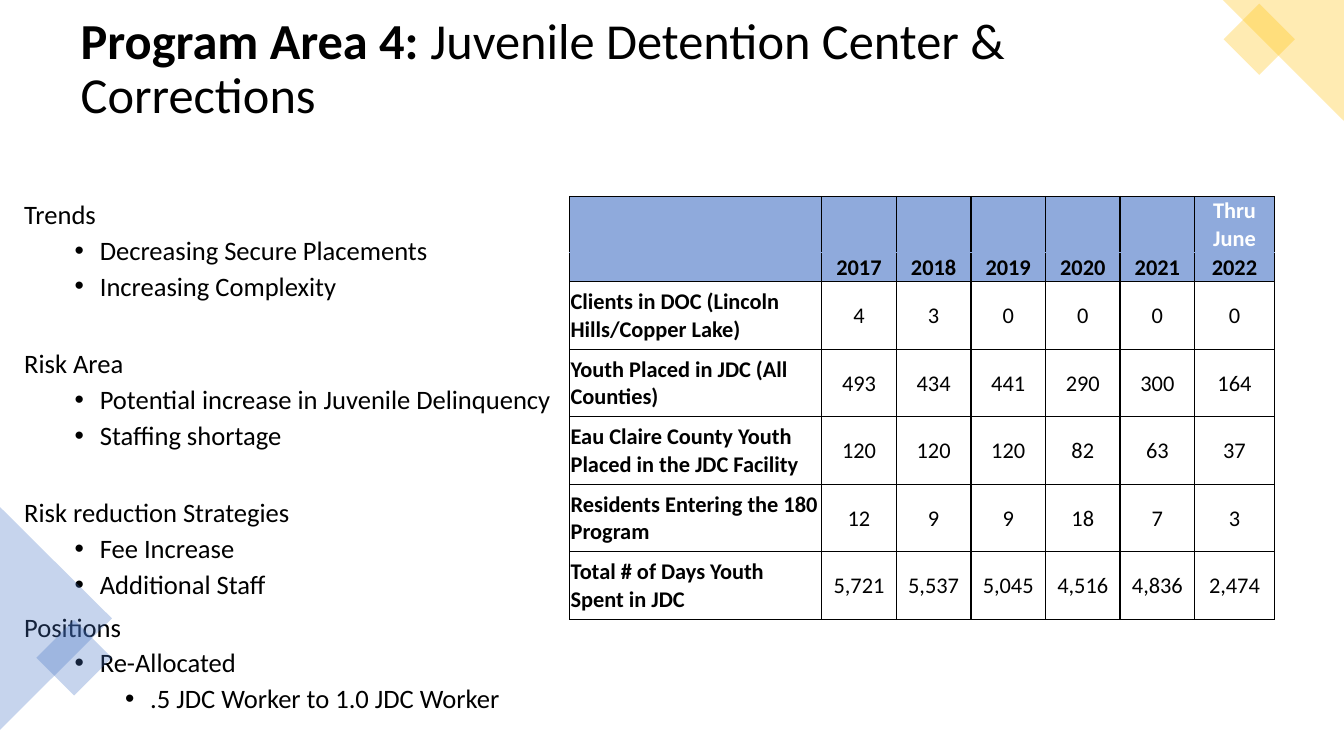
from lxml import etree
from pptx import Presentation
from pptx import util as u
from pptx.dml.color import RGBColor
from pptx.enum import shapes, text
from pptx.oxml import ns

BLACK, WHITE = "000000", "FFFFFF"
BLUE, GOLD, HEAD = "4472C4", "FFC000", "8FAADC"


def paint(fill, color, alpha=100):
    fill.solid()
    fill.fore_color.rgb = RGBColor.from_string(color)
    if alpha < 100:
        tint = fill._xPr.find(".//" + ns.qn("a:srgbClr"))
        etree.SubElement(tint, ns.qn("a:alpha"), val=str(alpha * 1000))


def write(para, words, size=16, bold=False, color=BLACK, align=None, line=None, gap=0):
    run = para.add_run()
    run.text = words
    run.font.name = "Calibri"
    run.font.size = u.Pt(size)
    run.font.bold = bold
    run.font.color.rgb = RGBColor.from_string(color)
    para.alignment = align
    para.line_spacing = line
    para.space_before = u.Pt(gap)


deck = Presentation()
deck.slide_width, deck.slide_height = u.Inches(13.33), u.Inches(7.5)
slide = deck.slides.add_slide(deck.slide_layouts[1])
title, body = slide.placeholders

for holder, place in ((title, (0.7, 0.35, 11.23, 1.24)), (body, (0.14, 1.95, 6, 5.41))):
    holder.left, holder.top, holder.width, holder.height = map(u.Inches, place)
    holder.text_frame.word_wrap = True
    holder.text_frame.auto_size = text.MSO_AUTO_SIZE.NONE

frame = title.text_frame
frame.vertical_anchor = text.MSO_ANCHOR.MIDDLE
frame.margin_bottom = u.Inches(0.6)
for words, bold in (("Program Area 4: ", True), ("Juvenile Detention Center & Corrections", False)):
    write(frame.paragraphs[0], words, size=36, bold=bold, align=text.PP_ALIGN.LEFT, line=0.9)

points = [
    (0, "Trends", 10),
    (1, "Decreasing Secure Placements", 5),
    (1, "Increasing Complexity", 5),
    (0, "Risk Area", 35),
    (1, "Potential increase in Juvenile Delinquency", 5),
    (1, "Staffing shortage", 5),
    (0, "Risk reduction Strategies", 35),
    (1, "Fee Increase", 5),
    (1, "Additional Staff", 5),
    (0, "Positions", 10),
    (1, "Re-Allocated", 5),
    (2, ".5 JDC Worker to 1.0 JDC Worker", 5),
]
frame = body.text_frame
for i, (level, words, gap) in enumerate(points):
    para = frame.paragraphs[0] if i == 0 else frame.add_paragraph()
    para.level = level
    write(para, words, size=19, line=0.9, gap=gap)
    props = para._p.get_or_add_pPr()
    props.set("marL", str(u.Inches(0.5 * level + 0.25 if level else 0)))
    props.set("indent", str(u.Inches(-0.25 if level else 0)))
    if level:
        etree.SubElement(props, ns.qn("a:buFont"), typeface="Arial")
        etree.SubElement(props, ns.qn("a:buChar"), char="•")
    else:
        etree.SubElement(props, ns.qn("a:buNone"))

kinds = shapes.MSO_SHAPE
accents = [
    (kinds.ISOSCELES_TRIANGLE, (-0.55, 5.58, 2.21, 1.11), 90, BLUE, 0.5),
    (kinds.RECTANGLE, (0.47, 6.26, 0.53, 0.53), 45, BLUE, None),
    (kinds.ISOSCELES_TRIANGLE, (12.13, 0, 1.2, 1.2), 270, GOLD, 1),
    (kinds.RECTANGLE, (12.24, 0.14, 0.5, 0.5), 45, GOLD, None),
]
for kind, place, turn, color, peak in accents:
    accent = slide.shapes.add_shape(kind, *map(u.Inches, place))
    accent.rotation = turn
    accent.shadow.inherit = False
    accent.line.fill.background()
    paint(accent.fill, color, 30)
    if peak is not None:
        accent.adjustments[0] = peak

rows = [
    [""] * 6 + ["Thru June"],
    ["", "2017", "2018", "2019", "2020", "2021", "2022"],
    ["Clients in DOC (Lincoln Hills/Copper Lake)", "4", "3", "0", "0", "0", "0"],
    ["Youth Placed in JDC (All Counties)", "493", "434", "441", "290", "300", "164"],
    ["Eau Claire County Youth Placed in the JDC Facility", "120", "120", "120", "82", "63", "37"],
    ["Residents Entering the 180 Program", "12", "9", "9", "18", "7", "3"],
    ["Total # of Days Youth Spent in JDC", "5,721", "5,537", "5,045", "4,516", "4,836", "2,474"],
]
wide = [2.5] + [0.74] * 5 + [0.79]
high = [0.51, 0.28] + [0.67] * 5
place = (5.65, 1.95, sum(wide), sum(high))
table = slide.shapes.add_table(len(high), len(wide), *map(u.Inches, place)).table
table.first_row = table.horz_banding = False
for col, size in zip(table.columns, wide):
    col.width = u.Inches(size)
for row, size in zip(table.rows, high):
    row.height = u.Inches(size)

for r, row in enumerate(rows):
    for c, words in enumerate(row):
        cell = table.cell(r, c)
        cell.margin_left = cell.margin_right = cell.margin_top = u.Inches(0.01)
        cell.margin_bottom = 0
        low = r == 1 and c < 6
        cell.vertical_anchor = text.MSO_ANCHOR.BOTTOM if low else text.MSO_ANCHOR.MIDDLE
        write(
            cell.text_frame.paragraphs[0],
            words,
            bold=r < 2 or c == 0,
            color=BLACK if r else WHITE,
            align=text.PP_ALIGN.CENTER if c else text.PP_ALIGN.LEFT,
        )
        props = cell._tc.get_or_add_tcPr()
        for side in "LRTB":
            edge = etree.SubElement(props, ns.qn("a:ln" + side), w=str(u.Pt(1)))
            solid = etree.SubElement(edge, ns.qn("a:solidFill"))
            seam = (r, side) in ((0, "B"), (1, "T"))
            etree.SubElement(solid, ns.qn("a:srgbClr"), val=HEAD if seam else BLACK)
        if r < 2:
            paint(cell.fill, HEAD)
        else:
            cell.fill.background()

deck.save("out.pptx")
